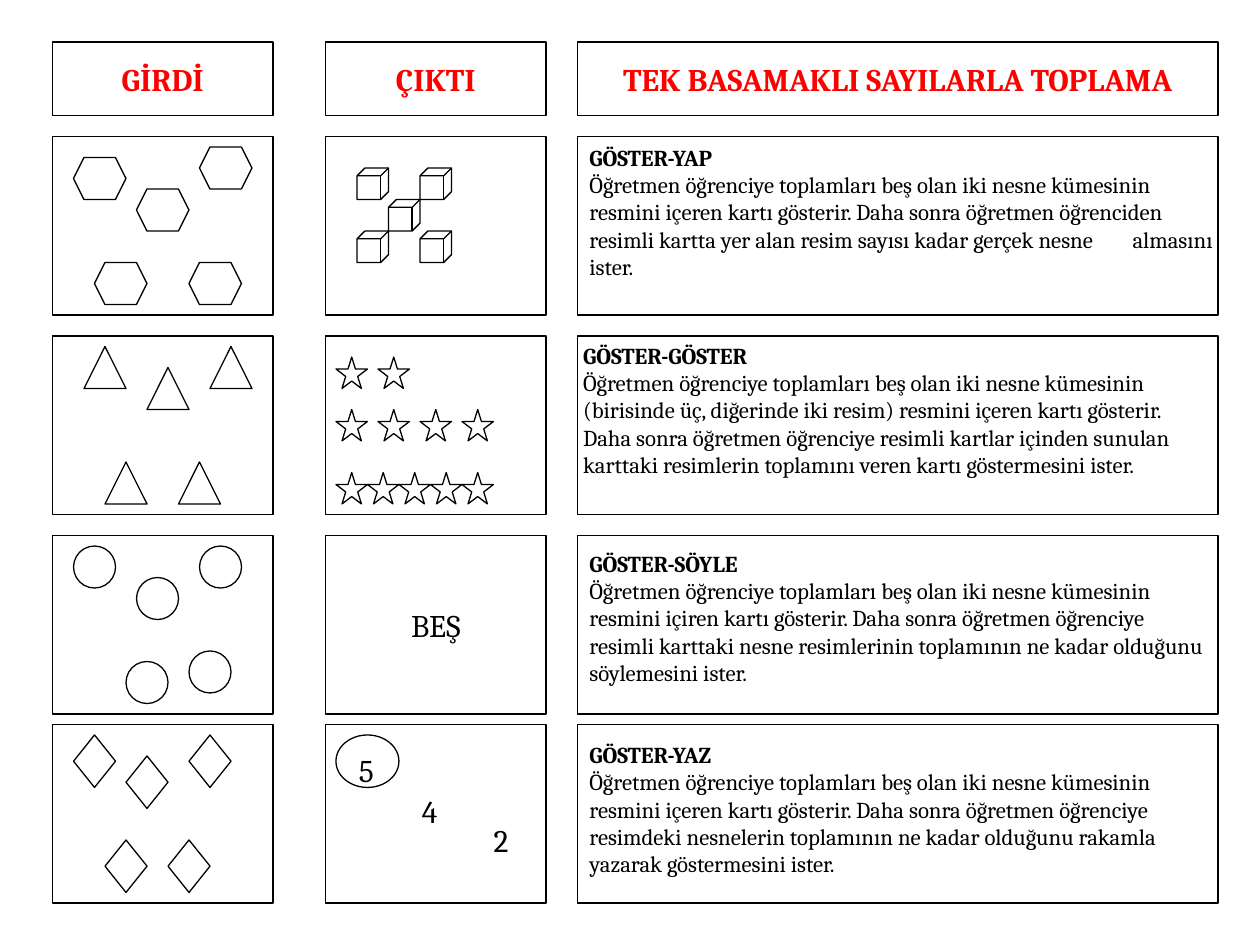
from pptx import Presentation
from pptx.dml.color import RGBColor
from pptx.enum.shapes import MSO_SHAPE
from pptx.enum.text import MSO_ANCHOR, MSO_AUTO_SIZE, PP_ALIGN
from pptx.oxml import parse_xml
from pptx.oxml.ns import nsdecls
from pptx.util import Inches, Pt

RECT, OVAL, STAR, CUBE = (MSO_SHAPE.RECTANGLE, MSO_SHAPE.OVAL,
                          MSO_SHAPE.STAR_5_POINT, MSO_SHAPE.CUBE)
HEXA, TRI, RHOMB = (MSO_SHAPE.FLOWCHART_PREPARATION,
                    MSO_SHAPE.FLOWCHART_EXTRACT, MSO_SHAPE.DIAMOND)
MIDDLE, NO_FIT = MSO_ANCHOR.MIDDLE, MSO_AUTO_SIZE.NONE
LEFT, CENTER = PP_ALIGN.LEFT, PP_ALIGN.CENTER

BLACK, RED = RGBColor(0, 0, 0), RGBColor(255, 0, 0)
THEME = {
    "line": Pt(0.75),
    "head": ({"name": "Cambria", "size": Pt(18), "bold": True}, RED),
    "big": ({"name": "Cambria", "size": Pt(18), "bold": False}, BLACK),
    "lead": ({"name": "Cambria", "size": Pt(13), "bold": True}, BLACK),
    "body": ({"name": "Cambria", "size": Pt(13), "bold": False}, BLACK),
}
CELL = 1 / 12  # the drawing grid, in inches


def draw(kind, *cells):
    """Add an unfilled outline; left, top, width and height are in grid cells."""
    item = slide.shapes.add_shape(kind, *[Inches(n * CELL) for n in cells])
    item.shadow.inherit = False
    item.fill.background()
    item.line.color.rgb = BLACK
    item.line.width = THEME["line"]
    return item


def write(frame, lines, style, rest=None, align=LEFT):
    """Fill a frame; the first line takes style, later ones take rest."""
    for i, line in enumerate(lines):
        para = frame.add_paragraph() if i else frame.paragraphs[0]
        para.alignment = align
        run = para.add_run()
        run.text = line
        form, color = THEME[rest if i else style]
        for key, value in form.items():
            setattr(run.font, key, value)
        run.font.color.rgb = color


deck = Presentation()
deck.slide_width, deck.slide_height = Inches(10), Inches(7.5)
slide = deck.slides.add_slide(deck.slide_layouts[5])

# Title, in the header row above the steps
title = slide.shapes.title
place = {"left": 55, "top": 4, "width": 61, "height": 7}
for key, n in place.items():
    setattr(title, key, Inches(n * CELL))
title.line.color.rgb = BLACK
title.line.width = THEME["line"]
frame = title.text_frame
frame.auto_size = NO_FIT
frame.vertical_anchor = MIDDLE
write(frame, ["TEK BASAMAKLI SAYILARLA TOPLAMA"], "head", align=CENTER)

# Column headers
for x, name in ((5, "GİRDİ"), (31, "ÇIKTI")):
    frame = draw(RECT, x, 4, 21, 7).text_frame
    frame.vertical_anchor = MIDDLE
    write(frame, [name], "head", align=CENTER)

# Empty frames: input, output and description of each step
boxes = {}
for y in (13, 32, 51, 69):
    for x, w in ((5, 21), (31, 21), (55, 61)):
        boxes[x, y] = draw(RECT, x, y, w, 17)

frame = boxes[31, 51].text_frame
frame.vertical_anchor = MIDDLE
write(frame, ["BEŞ"], "big", align=CENTER)

# Figures to count: kind, width, height, corners
figures = [
    (HEXA, 5, 4, [(7, 15), (13, 18), (19, 14), (9, 25), (18, 25)]),
    (TRI, 4, 4, [(8, 33), (14, 35), (20, 33), (10, 44), (17, 44)]),
    (OVAL, 4, 4, [(7, 52), (13, 55), (12, 63), (18, 62), (19, 52)]),
    (RHOMB, 4, 5, [(7, 70), (12, 72), (18, 70), (10, 80), (16, 80)]),
    (CUBE, 3, 3, [(34, 16), (40, 16), (37, 19), (34, 22), (40, 22)]),
]
for y, count, step in ((34, 2, 4), (39, 4, 4), (45, 5, 3)):
    figures.append((STAR, 3, 3, [(32 + i * step, y) for i in range(count)]))
for kind, w, h, spots in figures:
    for x, y in spots:
        draw(kind, x, y, w, h)

# Digits to choose from, the right one circled
for x, y, digit in ((2.75, 5.91, "5"), (3.25, 6.24, "4"), (3.82, 6.47, "2")):
    box = slide.shapes.add_textbox(Inches(x), Inches(y), Inches(0.34), Inches(0.4))
    write(box.text_frame, [digit], "big")
draw(OVAL, 32, 70, 6, 5)

# Descriptions
steps = [
    (4.58, 1.09, 5.42, [
        "GÖSTER-YAP",
        "Öğretmen öğrenciye toplamları beş olan iki nesne kümesinin",
        "resmini içeren kartı gösterir. Daha sonra öğretmen öğrenciden",
        "resimli kartta yer alan resim sayısı kadar gerçek nesne\talmasını ister."]),
    (4.53, 2.66, 5.14, [
        "GÖSTER-GÖSTER",
        "Öğretmen öğrenciye toplamları beş olan iki nesne kümesinin",
        "(birisinde üç, diğerinde iki resim) resmini içeren kartı gösterir.",
        "Daha sonra öğretmen öğrenciye resimli kartlar içinden sunulan",
        "karttaki resimlerin toplamını veren kartı göstermesini ister."]),
    (4.58, 4.31, 5.1, [
        "GÖSTER-SÖYLE",
        "Öğretmen öğrenciye toplamları beş olan iki nesne kümesinin resmini "
        "içiren kartı gösterir. Daha sonra öğretmen öğrenciye resimli karttaki "
        "nesne resimlerinin toplamının ne kadar olduğunu söylemesini ister."]),
    (4.58, 5.83, 5.16, [
        "GÖSTER-YAZ",
        "Öğretmen öğrenciye toplamları beş olan iki nesne kümesinin",
        "resmini içeren kartı gösterir. Daha sonra öğretmen öğrenciye",
        "resimdeki nesnelerin toplamının ne kadar olduğunu rakamla",
        "yazarak göstermesini ister."]),
]
for x, y, w, lines in steps:
    box = slide.shapes.add_textbox(Inches(x), Inches(y), Inches(w), Inches(1.19))
    frame = box.text_frame
    frame.word_wrap = True
    write(frame, lines, "lead", "body")
    for para in frame.paragraphs:
        if "\t" in para.text:
            para._p.get_or_add_pPr().append(parse_xml(
                f'<a:tabLst {nsdecls("a")}>'
                f'<a:tab pos="{Inches(4.31)}" algn="l"/></a:tabLst>'))

deck.save("out.pptx")
